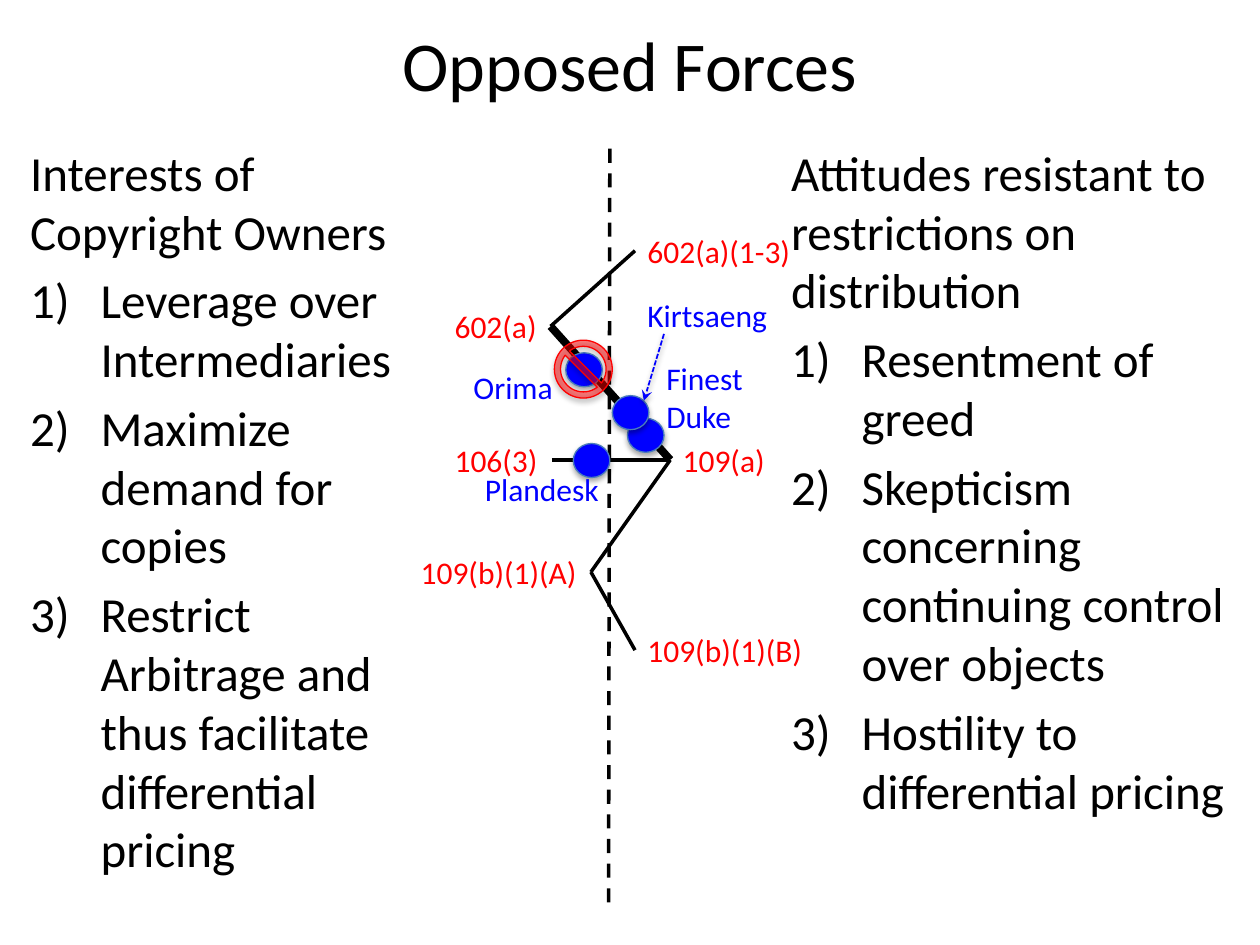
from dataclasses import dataclass

from lxml import etree
from pptx import Presentation, util as u
from pptx.dml.color import RGBColor
from pptx.enum import dml, shapes, text
from pptx.oxml import ns

Inches, Pt = u.Inches, u.Pt


@dataclass(frozen=True)
class Theme:
    """Colours, font and type sizes of the slide."""
    font: str = "Calibri"
    ink: str = "000000"
    statute: str = "FF0000"
    case: str = "0000FF"
    rim: str = "4B7EBC"
    title: int = 40
    body: int = 28
    label: int = 18


THEME = Theme()
LEFT, RIGHT = 1, 3

STATUTES = {
    "106(3)": (3.51, 3.45, 0.87),
    "602(a)": (3.51, 2.39, 0.86),
    "109(a)": (5.32, 3.45, 0.86),
    "109(b)(1)(A)": (3.24, 4.34, 1.45),
    "109(b)(1)(B)": (5.04, 4.96, 1.44),
    "602(a)(1-3)": (5.04, 1.79, 1.35),
}
LINKS = [
    ("602(a)", "602(a)(1-3)", 2),
    ("602(a)", "109(a)", 4.5),
    ("106(3)", "109(a)", 2),
    ("109(b)(1)(A)", "109(a)", 2),
    ("109(b)(1)(A)", "109(b)(1)(B)", 2),
]
CASES = [
    ("Finest\nDuke", (5.19, 2.8, 0.94, 0.71), (4.98, 3.32)),
    ("Orima", (3.66, 2.87, 0.94), (4.49, 2.8)),
    ("Kirtsaeng", (5.04, 2.3, 1.16), (4.86, 3.14)),
    ("Plandesk", (3.75, 3.68, 1.17), (4.55, 3.52)),
]
INTERESTS = [
    "Interests of Copyright Owners",
    "Leverage over Intermediaries",
    "Maximize demand for copies",
    "Restrict Arbitrage and thus facilitate differential pricing",
]
ATTITUDES = [
    "Attitudes resistant to restrictions on distribution",
    "Resentment of greed",
    "Skepticism concerning continuing control over objects",
    "Hostility to differential pricing",
]


def rgb(code):
    """Turn a hex code into a colour."""
    return RGBColor.from_string(code)


def sub(parent, tag, **attrs):
    """Append a DrawingML element with the given attributes."""
    return etree.SubElement(parent, ns.qn(tag), {k: str(v) for k, v in attrs.items()})


def add_text(s, lines, left, top, width, height, size, color, wrap=True):
    """Add a text box with one paragraph per line."""
    box = s.shapes.add_textbox(*map(Inches, (left, top, width, height)))
    tf = box.text_frame
    tf.text = lines
    tf.word_wrap = wrap
    for p in tf.paragraphs:
        for r in p.runs:
            r.font.name = THEME.font
            r.font.size = Pt(size)
            r.font.color.rgb = rgb(color)
    return box


def add_label(s, lines, color, left, top, width, height=0.4):
    """Add a small unwrapped label that fits its text."""
    box = add_text(s, lines, left, top, width, height, THEME.label, color, False)
    box.text_frame.auto_size = text.MSO_AUTO_SIZE.SHAPE_TO_FIT_TEXT
    return box


def add_column(s, lines, left, width, height):
    """Add a heading followed by a numbered list."""
    box = add_text(s, "\n".join(lines), left, 1.08, width, height, THEME.body, THEME.ink)
    for p in box.text_frame.paragraphs[1:]:
        pPr = p._p.get_or_add_pPr()
        pPr.set("marL", str(Inches(0.56)))
        pPr.set("indent", str(-Inches(0.56)))
        sub(pPr, "a:buAutoNum", type="arabicParenR")
        p.space_before = Pt(0.2 * THEME.body)


def add_shadow(shape, opacity):
    """Give a shape a soft shadow falling straight down."""
    effects = sub(shape._element.spPr, "a:effectLst")
    shadow = sub(effects, "a:outerShdw", blurRad=Pt(3.1), dist=Pt(1.8),
                 dir=5400000, rotWithShape=0)
    color = sub(shadow, "a:srgbClr", val=THEME.ink)
    sub(color, "a:alpha", val=opacity * 1000)


def add_line(s, start, end, color, width, dash=None):
    """Add a straight line between two points."""
    line = s.shapes.add_connector(shapes.MSO_CONNECTOR.STRAIGHT,
                                  *map(Inches, start + end))
    line.line.color.rgb = rgb(color)
    line.line.width = Pt(width)
    if dash:
        line.line.dash_style = dash
    return line


def add_plain_line(s, start, end, width, dash=None):
    """Add a black line without a shadow."""
    line = add_line(s, start, end, THEME.ink, width, dash)
    sub(line._element.spPr, "a:effectLst")
    return line


def add_link(s, left_label, right_label, width):
    """Join the facing sides of two labels."""
    line = add_plain_line(s, (0, 0), (0, 0), width)
    line.begin_connect(left_label, RIGHT)
    line.end_connect(right_label, LEFT)


def add_pointer(s, start, end):
    """Add a dashed arrow from a case name to its dot."""
    line = add_line(s, start, end, THEME.case, 1, dml.MSO_LINE.SQUARE_DOT)
    sub(line._element.spPr.find(ns.qn("a:ln")), "a:tailEnd", type="stealth")
    add_shadow(line, 38)


def add_mark(s, kind, left, top, width, height, fill, rim):
    """Add a filled, outlined shape with a shadow."""
    mark = s.shapes.add_shape(kind, *map(Inches, (left, top, width, height)))
    mark.fill.solid()
    mark.fill.fore_color.rgb = rgb(fill)
    mark.line.color.rgb = rgb(rim)
    mark.line.width = Pt(0.75)
    add_shadow(mark, 35)
    return mark


def add_ban(s):
    """Add the translucent prohibition sign."""
    ban = add_mark(s, shapes.MSO_SHAPE.NO_SYMBOL, 4.4, 2.7, 0.46, 0.46,
                   THEME.statute, THEME.statute)
    ban.adjustments[0] = 0.106
    color = ban._element.spPr.find(ns.qn("a:solidFill")).find(ns.qn("a:srgbClr"))
    sub(color, "a:alpha", val=49000)


def main():
    """Build and save the slide."""
    prs = Presentation()
    prs.slide_width, prs.slide_height = Inches(10), Inches(7.5)
    s = prs.slides.add_slide(prs.slide_layouts[6])

    title = add_text(s, "Opposed Forces", 0.5, 0.12, 9, 0.77, THEME.title, THEME.ink)
    title.text_frame.vertical_anchor = text.MSO_ANCHOR.MIDDLE
    title.text_frame.paragraphs[0].alignment = text.PP_ALIGN.CENTER
    add_column(s, INTERESTS, 0.14, 3.48, 6.21)
    add_column(s, ATTITUDES, 6.18, 3.82, 5.55)
    add_plain_line(s, (4.84, 1.18), (4.83, 7.17), 2, dml.MSO_LINE.DASH)

    labels = {name: add_label(s, name, THEME.statute, *at)
              for name, at in STATUTES.items()}
    for start, end, width in LINKS:
        add_link(s, labels[start], labels[end], width)

    for name, at, dot in CASES:
        add_mark(s, shapes.MSO_SHAPE.OVAL, *dot, 0.29, 0.27, THEME.case, THEME.rim)
        add_label(s, name, THEME.case, *at)
    add_pointer(s, (5.27, 2.65), (5.11, 3.18))
    add_ban(s)

    prs.save("out.pptx")


if __name__ == "__main__":
    main()
